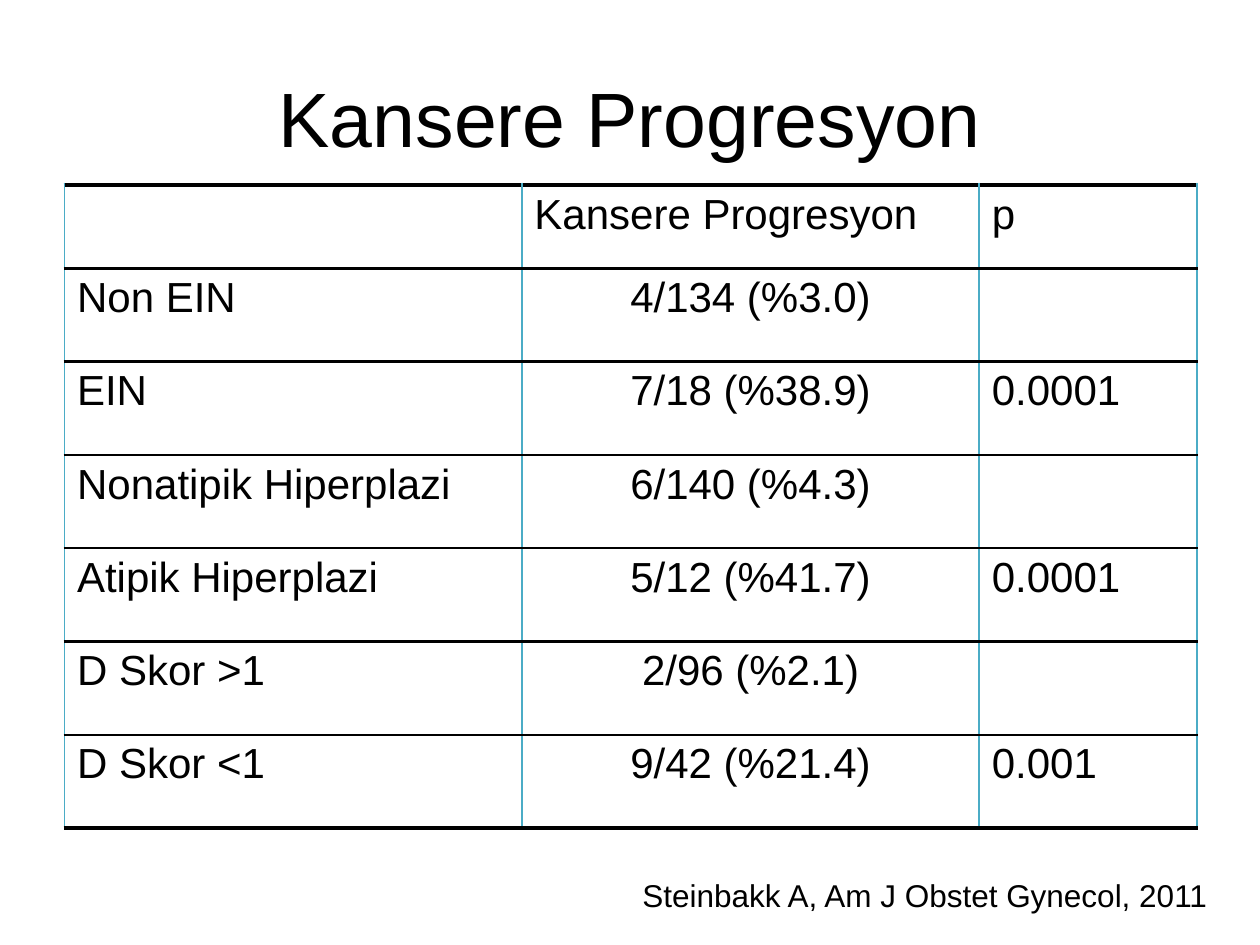
"""Build the slide on progression to cancer with its results table."""
from lxml import etree
from pptx import Presentation
from pptx import util as u
from pptx.dml.color import RGBColor
from pptx.enum import text
from pptx.oxml.ns import qn

TITLE = "Kansere Progresyon"
SOURCE = "Steinbakk A, Am J Obstet Gynecol, 2011"
ROWS = [
    ("", "Kansere Progresyon", "p"),
    ("Non EIN", "4/134 (%3.0)", ""),
    ("EIN", "7/18 (%38.9)", "0.0001"),
    ("Nonatipik Hiperplazi", "6/140 (%4.3)", ""),
    ("Atipik Hiperplazi", "5/12 (%41.7)", "0.0001"),
    ("D Skor >1", "2/96 (%2.1)", ""),
    ("D Skor <1", "9/42 (%21.4)", "0.001"),
]
THEME = {
    "font": "Arial", "ink": "000000", "grid": "4BACC6",
    "title": 44, "cell": 24, "source": 18,
    "outer": 3, "inner": 1.5, "side": 1,
}
COL_WIDTHS = (9.22, 9.22, 4.39)
HEADER_HEIGHT, ROW_HEIGHT = 1.68, 1.88


def add_run(p, words, size):
    r = p.add_run()
    r.text = words
    r.font.name = THEME["font"]
    r.font.size = u.Pt(size)
    r.font.bold = False
    r.font.color.rgb = RGBColor.from_string(THEME["ink"])


def set_borders(cell, top, bottom):
    side = (THEME["grid"], THEME["side"])
    edges = {"lnL": side, "lnR": side,
             "lnT": (THEME["ink"], top), "lnB": (THEME["ink"], bottom)}
    tc_pr = cell._tc.get_or_add_tcPr()
    for i, (tag, (color, width)) in enumerate(edges.items()):
        ln = etree.Element(qn("a:" + tag), w=str(u.Pt(width)))
        fill = etree.SubElement(ln, qn("a:solidFill"))
        etree.SubElement(fill, qn("a:srgbClr"), val=color)
        tc_pr.insert(i, ln)


def add_results(s):
    heights = [HEADER_HEIGHT] + [ROW_HEIGHT] * (len(ROWS) - 1)
    tbl = s.shapes.add_table(
        len(ROWS), len(COL_WIDTHS), u.Cm(1.3), u.Cm(3.73),
        u.Cm(sum(COL_WIDTHS)), u.Cm(sum(heights))).table
    tbl.first_row = tbl.horz_banding = False
    for col, width in zip(tbl.columns, COL_WIDTHS):
        col.width = u.Cm(width)
    last = len(ROWS) - 1
    for i, (values, height) in enumerate(zip(ROWS, heights)):
        tbl.rows[i].height = u.Cm(height)
        top = THEME["outer" if i == 0 else "inner"]
        bottom = THEME["outer" if i == last else "inner"]
        for j, value in enumerate(values):
            cell = tbl.cell(i, j)
            cell.fill.background()
            set_borders(cell, top, bottom)
            p = cell.text_frame.paragraphs[0]
            if i and j == 1:
                p.alignment = text.PP_ALIGN.CENTER
            if value:
                add_run(p, value, THEME["cell"])


def main():
    prs = Presentation()
    prs.slide_width, prs.slide_height = u.Cm(25.4), u.Cm(19.05)
    s = prs.slides.add_slide(prs.slide_layouts[5])

    title = s.shapes.title
    title.left, title.top = u.Cm(1.27), u.Cm(0.76)
    title.width, title.height = u.Cm(22.86), u.Cm(3.18)
    tf = title.text_frame
    tf.vertical_anchor = text.MSO_ANCHOR.MIDDLE
    tf.paragraphs[0].alignment = text.PP_ALIGN.CENTER
    add_run(tf.paragraphs[0], TITLE, THEME["title"])

    add_results(s)

    sp = s.shapes.add_textbox(u.Cm(12.7), u.Cm(17.53), u.Cm(12.01), u.Cm(1.02))
    tf = sp.text_frame
    tf.word_wrap = False
    tf.auto_size = text.MSO_AUTO_SIZE.SHAPE_TO_FIT_TEXT
    add_run(tf.paragraphs[0], SOURCE, THEME["source"])

    prs.save("out.pptx")


if __name__ == "__main__":
    main()
